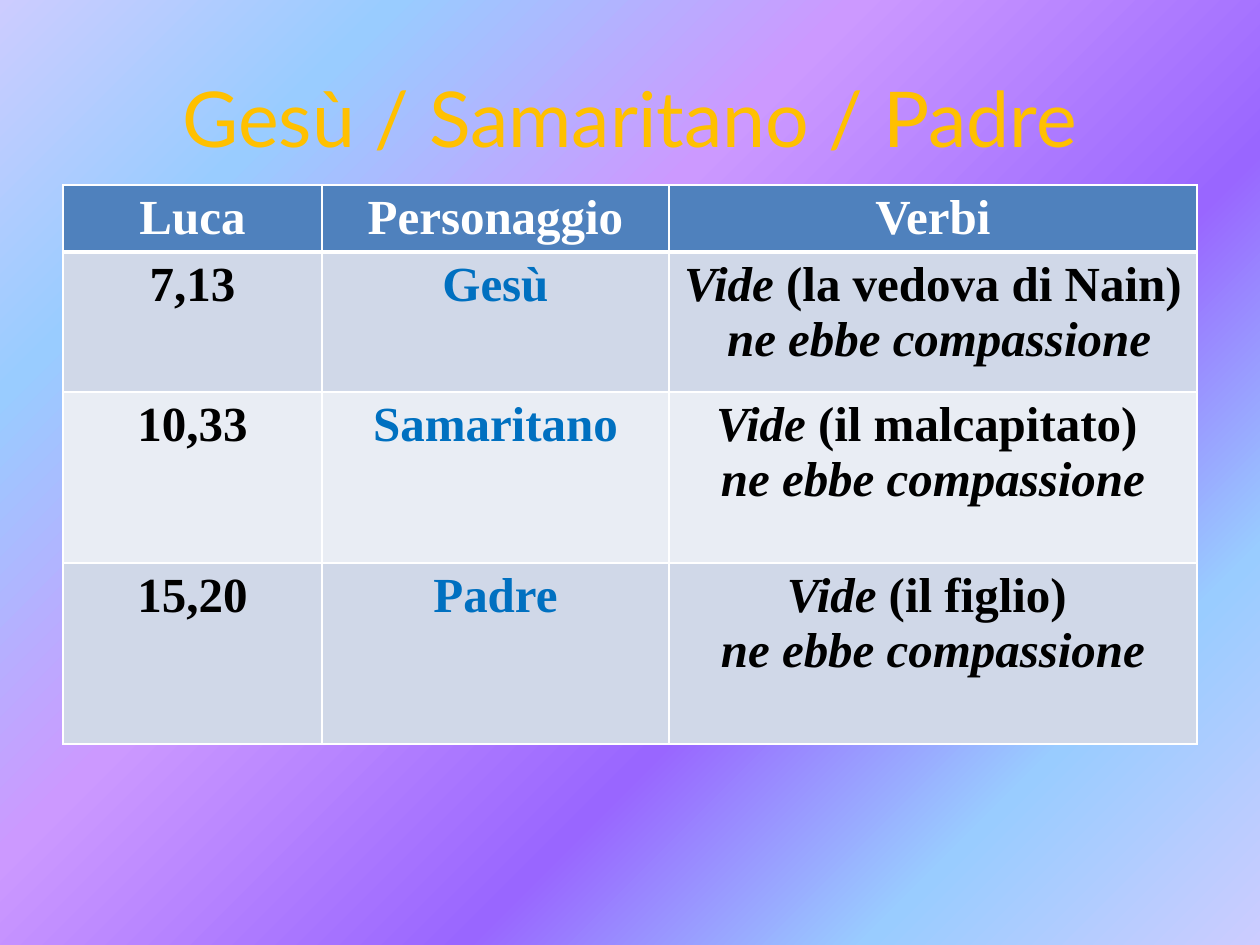
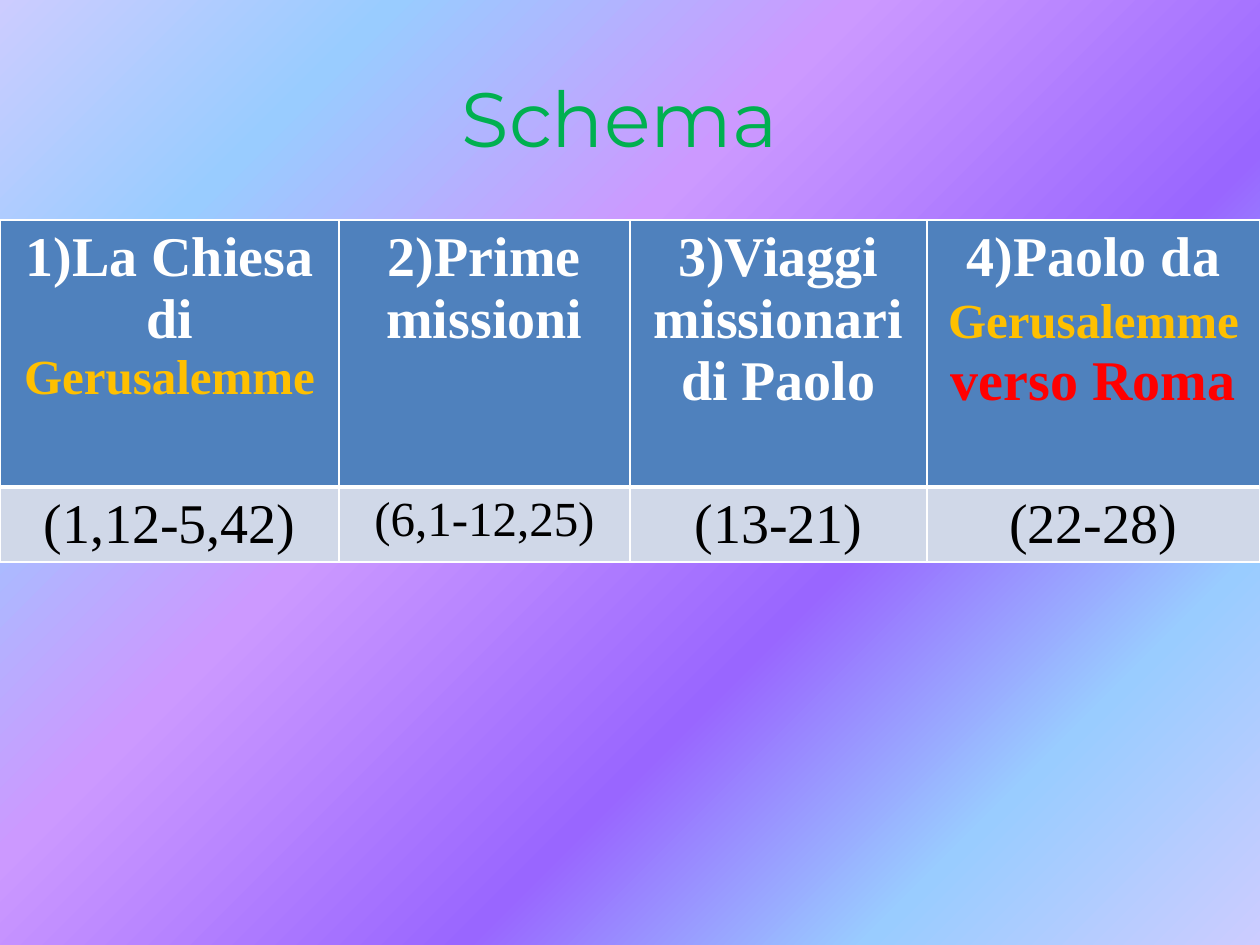
from lxml import etree
from pptx import Presentation
from pptx.dml.color import RGBColor
from pptx.enum.text import MSO_ANCHOR, PP_ALIGN
from pptx.oxml import parse_xml
from pptx.oxml.ns import nsdecls, qn
from pptx.util import Pt

CENTER = PP_ALIGN.CENTER
MIDDLE = MSO_ANCHOR.MIDDLE
PX = 914400 // 126
WIDE, HIGH = 1260, 945

WHITE = RGBColor(0xFF, 0xFF, 0xFF)
BLACK = RGBColor(0x00, 0x00, 0x00)
GOLD = RGBColor(0xFF, 0xC0, 0x00)
GREEN = RGBColor(0x00, 0xB0, 0x50)
BLUE = RGBColor(0x00, 0x70, 0xC0)
RED = RGBColor(0xFF, 0x00, 0x00)
HEAD = RGBColor(0x4F, 0x81, 0xBD)
BANDS = [RGBColor(0xE9, 0xED, 0xF4), RGBColor(0xD0, 0xD8, 0xE8)]
STOPS = [(0, "CCCCFF"), (18, "99CCFF"), (36, "9966FF"),
         (61, "CC99FF"), (82, "99CCFF"), (100, "CCCCFF")]
SERIF = "Times New Roman"
TITLE = (63, 38, 1134, 158)

NAME = {"color": BLUE}
SAID = {"italic": True}
CITY = {"size": 28, "color": GOLD}


def verbs(who, lead=""):
    return [[("Vide", SAID), who], [lead, ("ne ebbe compassione", SAID)]]


SLIDES = [
    {
        "title": "Gesù / Samaritano / Padre", "font": "Lato", "color": GOLD,
        "at": (63, 185), "cols": [259, 347, 528], "rows": [65, 140, 171, 181],
        "size": 28, "bold": True,
        "cells": [
            ["Luca", "Personaggio", "Verbi"],
            ["7,13", [[("Gesù", NAME)]], verbs(" (la vedova di Nain)", " ")],
            ["10,33", [[("Samaritano", NAME)]], verbs(" (il malcapitato) ")],
            ["15,20", [[("Padre", NAME)]], verbs(" (il figlio) ")],
        ],
    },
    {
        "title": "Schema ", "font": "Montserrat", "color": GREEN,
        "at": (0, 220), "cols": [339, 291, 297, 333], "rows": [267, 75],
        "size": 32, "bold": False,
        "cells": [
            [[["1)La Chiesa di ", ("Gerusalemme", CITY)]],
             "2)Prime missioni",
             "3)Viaggi missionari di Paolo",
             [["4)Paolo da ", ("Gerusalemme", CITY), " ",
               ("verso Roma", {"color": RED})]]],
            ["(1,12-5,42)", [[("(6,1-12,25)", {"size": 28})]],
             "(13-21)", "(22-28)"],
        ],
    },
]


def write(frame, text, **base):
    paras = [[text]] if isinstance(text, str) else text
    for n, runs in enumerate(paras):
        para = frame.add_paragraph() if n else frame.paragraphs[0]
        para.alignment = CENTER
        for part in runs:
            words, own = (part, {}) if isinstance(part, str) else part
            if not words:
                continue
            look = {**base, **own}
            run = para.add_run()
            run.text = words
            run.font.name = look["font"]
            run.font.size = Pt(look["size"])
            run.font.color.rgb = look["color"]
            run.font.bold = look.get("bold", False)
            run.font.italic = look.get("italic", False)


def paint(master):
    master.background.fill.solid()
    stops = "".join(f'<a:gs pos="{pos * 1000}"><a:srgbClr val="{tone}"/></a:gs>'
                    for pos, tone in STOPS)
    grad = parse_xml(
        f'<a:gradFill {nsdecls("a")} rotWithShape="1"><a:gsLst>{stops}</a:gsLst>'
        '<a:path path="circle"><a:fillToRect l="100000" t="100000"/></a:path>'
        '</a:gradFill>')
    props = master.element.find(".//" + qn("p:bgPr"))
    props.replace(props.find(qn("a:solidFill")), grad)


def edge(cell, row):
    props = cell._tc.get_or_add_tcPr()
    sides = {"lnL": 1, "lnR": 1, "lnT": 3 if row == 1 else 1,
             "lnB": 1 if row else 3}
    for n, (side, wide) in enumerate(sides.items()):
        line = etree.Element(qn("a:" + side), w=str(Pt(wide)))
        fill = etree.SubElement(line, qn("a:solidFill"))
        etree.SubElement(fill, qn("a:srgbClr"), val=str(WHITE))
        props.insert(n, line)


def grid(slide, data):
    cols, rows = data["cols"], data["rows"]
    box = (*data["at"], sum(cols), sum(rows))
    table = slide.shapes.add_table(
        len(rows), len(cols), *(v * PX for v in box)).table
    for col, wide in zip(table.columns, cols):
        col.width = wide * PX
    for r, (row, high) in enumerate(zip(table.rows, rows)):
        row.height = high * PX
        for cell, text in zip(row.cells, data["cells"][r]):
            cell.fill.solid()
            cell.fill.fore_color.rgb = BANDS[r % 2] if r else HEAD
            edge(cell, r)
            write(cell.text_frame, text, font=SERIF, size=data["size"],
                  color=BLACK if r else WHITE, bold=not r or data["bold"])


def main():
    deck = Presentation()
    deck.slide_width, deck.slide_height = WIDE * PX, HIGH * PX
    paint(deck.slide_master)
    for data in SLIDES:
        slide = deck.slides.add_slide(deck.slide_layouts[5])
        title = slide.shapes.title
        title.left, title.top, title.width, title.height = (
            v * PX for v in TITLE)
        title.text_frame.vertical_anchor = MIDDLE
        write(title.text_frame, data["title"], font=data["font"], size=44,
              color=data["color"])
        grid(slide, data)
    deck.save("out.pptx")


if __name__ == "__main__":
    main()
